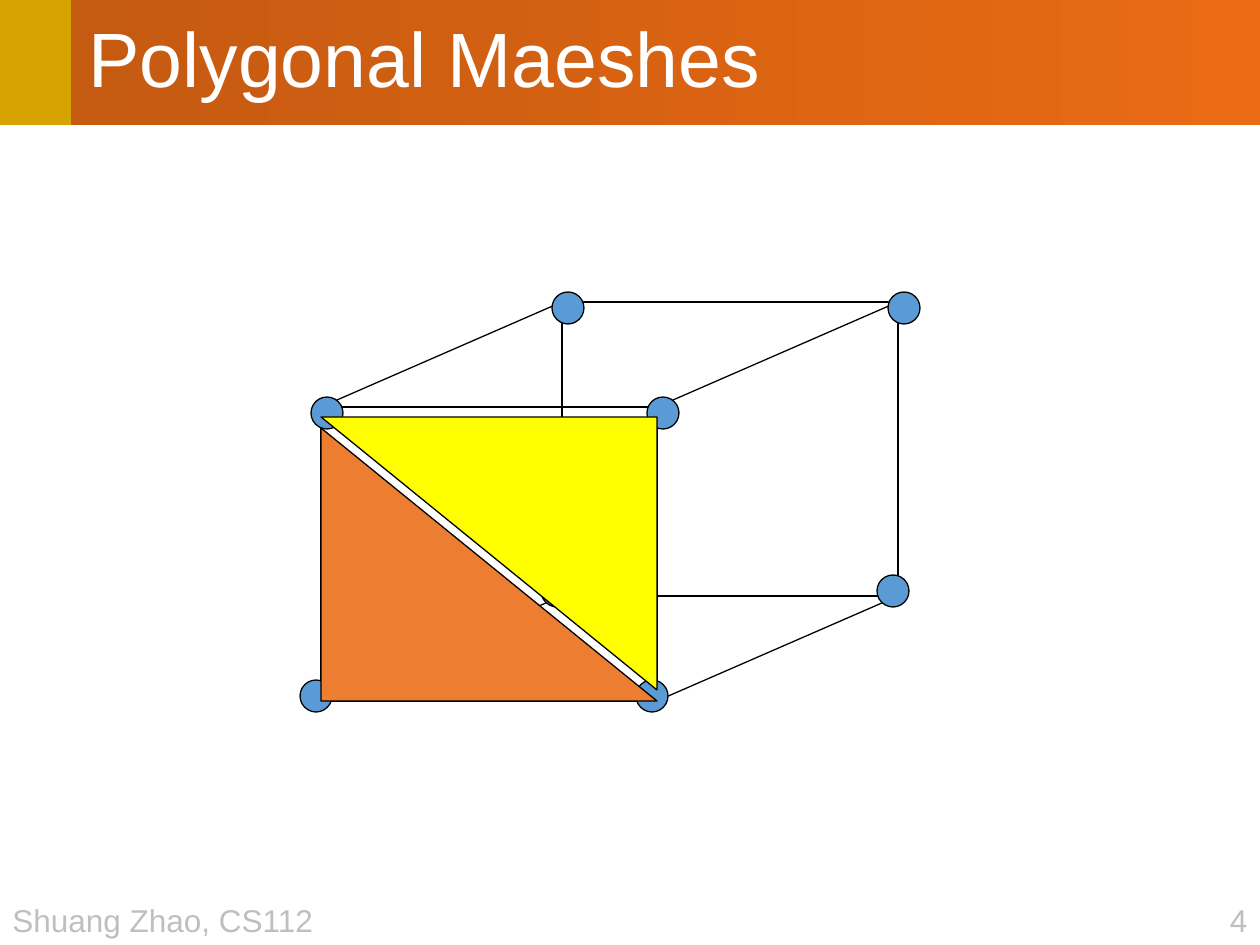
from lxml import etree
from pptx import Presentation
from pptx.dml.color import RGBColor
from pptx.enum.shapes import MSO_CONNECTOR, MSO_SHAPE
from pptx.enum.text import MSO_ANCHOR, PP_ALIGN
from pptx.oxml.ns import qn
from pptx.util import Pt

PX = 914400 // 126
SLIDE_WIDTH, SLIDE_HEIGHT = 1260, 945

RECTANGLE, OVAL = MSO_SHAPE.RECTANGLE, MSO_SHAPE.OVAL
TRIANGLE = MSO_SHAPE.RIGHT_TRIANGLE
STRAIGHT = MSO_CONNECTOR.STRAIGHT
LEFT, RIGHT = PP_ALIGN.LEFT, PP_ALIGN.RIGHT
TOP, MIDDLE = MSO_ANCHOR.TOP, MSO_ANCHOR.MIDDLE

BLACK = RGBColor(0x00, 0x00, 0x00)
WHITE = RGBColor(0xFF, 0xFF, 0xFF)
GRAY = RGBColor(0xBF, 0xBF, 0xBF)
GOLD = RGBColor(0xD6, 0xA3, 0x00)
DARK_ORANGE = RGBColor(0xC5, 0x5A, 0x11)
BRIGHT_ORANGE = RGBColor(0xEA, 0x6B, 0x14)
BLUE = RGBColor(0x5B, 0x9B, 0xD5)
ORANGE = RGBColor(0xED, 0x7D, 0x31)
YELLOW = RGBColor(0xFF, 0xFF, 0x00)

HEADER_HEIGHT = 125
ACCENT_WIDTH = 71
FOOTER_TOP, FOOTER_HEIGHT = 895, 50

FACE_WIDTH, FACE_HEIGHT = 336, 294
FRONT = (321, 407)
BACK = (562, 302)
VERTEX_SIZE = 32
TRIANGLE_HEIGHT = 273
TRIANGLE_GAP = 11


def emu(*lengths):
    return [length * PX for length in lengths]


def add_shape(slide, kind, left, top, width, height, fill=None, line=None):
    shape = slide.shapes.add_shape(kind, *emu(left, top, width, height))
    shape.shadow.inherit = False
    if fill is None:
        shape.fill.background()
    else:
        shape.fill.solid()
        shape.fill.fore_color.rgb = fill
    if line is None:
        shape.line.fill.background()
    else:
        shape.line.color.rgb = line
        shape.line.width = Pt(0.75)
    return shape


def add_edge(slide, start, end):
    edge = slide.shapes.add_connector(STRAIGHT, *emu(*start, *end))
    edge.line.color.rgb = BLACK
    edge.line.width = Pt(0.75)
    etree.SubElement(edge._element.spPr, qn("a:effectLst"))


def write_text(shape, text, size=18, color=GRAY, align=LEFT, anchor=TOP,
               wrap=False, spacing=None, indent=0):
    frame = shape.text_frame
    frame.word_wrap = wrap
    frame.vertical_anchor = anchor
    paragraph = frame.paragraphs[0]
    paragraph.alignment = align
    paragraph.line_spacing = spacing
    if indent:
        paragraph._p.get_or_add_pPr().set("marL", str(indent * PX))
    run = paragraph.add_run()
    run.text = text
    run.font.name = "Arial"
    run.font.size = Pt(size)
    run.font.color.rgb = color


def add_header(slide, title):
    add_shape(slide, RECTANGLE, 0, 0, ACCENT_WIDTH, HEADER_HEIGHT, GOLD)
    bar = add_shape(slide, RECTANGLE, ACCENT_WIDTH, 0,
                    SLIDE_WIDTH - ACCENT_WIDTH, HEADER_HEIGHT)
    bar.fill.gradient()
    bar.fill.gradient_angle = 0
    for stop, color in zip(bar.fill.gradient_stops, (DARK_ORANGE, BRIGHT_ORANGE)):
        stop.color.rgb = color
    write_text(bar, title, size=44, color=WHITE, anchor=MIDDLE, wrap=True,
               spacing=0.9, indent=5)


def add_footer(slide, text, left, width, align):
    box = slide.shapes.add_textbox(*emu(left, FOOTER_TOP, width, FOOTER_HEIGHT))
    write_text(box, text, align=align)


def add_face(slide, corner):
    add_shape(slide, RECTANGLE, *corner, FACE_WIDTH, FACE_HEIGHT, line=BLACK)


def add_cube(slide):
    add_face(slide, FRONT)
    for across in (0, FACE_WIDTH):
        for down in (0, FACE_HEIGHT):
            start, end = ((x + across, y + down) for x, y in (FRONT, BACK))
            add_edge(slide, start, end)
    add_face(slide, BACK)


def add_vertices(slide):
    """Mark the corners; the lower dots sit further up and to the left."""
    for x, y in (FRONT, BACK):
        for down, shift in ((0, 10), (FACE_HEIGHT, 21)):
            for across in (0, FACE_WIDTH):
                add_shape(slide, OVAL, x + across - shift, y + down - shift,
                          VERTEX_SIZE, VERTEX_SIZE, BLUE, BLACK)


def add_triangles(slide):
    left, top = FRONT
    lower_top = top + FACE_HEIGHT - TRIANGLE_HEIGHT
    add_shape(slide, TRIANGLE, left, lower_top, FACE_WIDTH, TRIANGLE_HEIGHT,
              ORANGE, BLACK)
    upper = add_shape(slide, TRIANGLE, left, lower_top - TRIANGLE_GAP,
                      FACE_WIDTH, TRIANGLE_HEIGHT, YELLOW, BLACK)
    for flip in ("flipH", "flipV"):
        upper._element.spPr.xfrm.set(flip, "1")


def main():
    presentation = Presentation()
    presentation.slide_width, presentation.slide_height = emu(SLIDE_WIDTH, SLIDE_HEIGHT)
    slide = presentation.slides.add_slide(presentation.slide_layouts[6])
    add_header(slide, "Polygonal Maeshes")
    add_footer(slide, "4", 1196, 64, RIGHT)
    add_footer(slide, "Shuang Zhao, CS112", 0, 329, LEFT)
    add_cube(slide)
    add_vertices(slide)
    add_triangles(slide)
    presentation.save("out.pptx")


if __name__ == "__main__":
    main()
